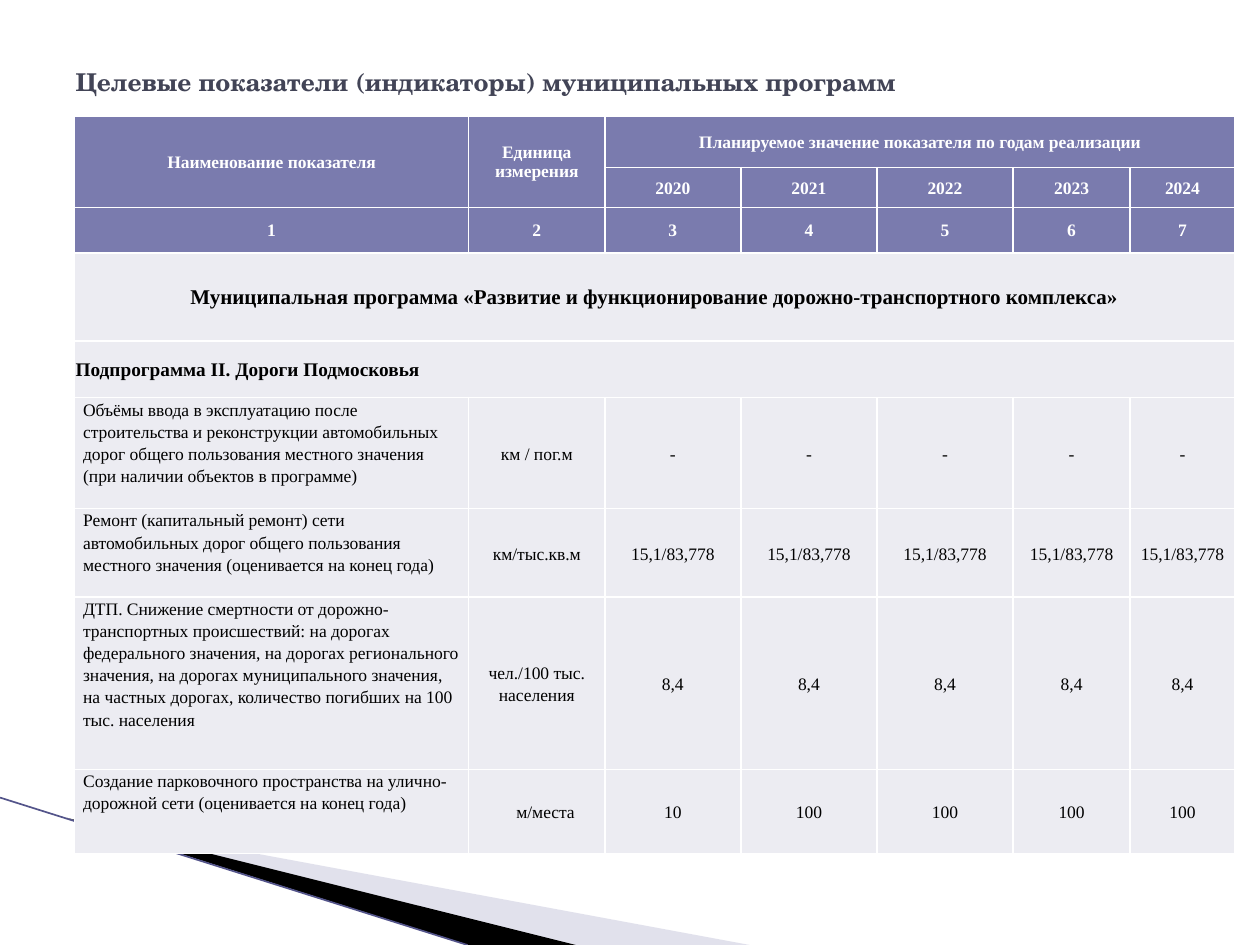
from lxml.etree import SubElement
from pptx import Presentation
from pptx.dml.color import RGBColor
from pptx.enum.shapes import MSO_CONNECTOR
from pptx.enum.text import MSO_ANCHOR, PP_ALIGN
from pptx.oxml import parse_xml
from pptx.oxml.ns import nsdecls, qn
from pptx.util import Inches, Pt

HEADER, BODY, WHITE, BLACK = "7A7BAE", "ECECF2", "FFFFFF", "000000"


def color(value):
    return RGBColor.from_string(value)


def write(frame, text, size=10, font="Times New Roman", ink=BLACK, bold=False,
          align=PP_ALIGN.CENTER, spacing=1.0):
    paragraph = frame.paragraphs[0]
    paragraph.alignment = align
    paragraph.line_spacing = spacing
    run = paragraph.add_run()
    run.text = text
    run.font.size = Pt(size)
    run.font.name = font
    run.font.bold = bold
    run.font.color.rgb = color(ink)


presentation = Presentation()
presentation.slide_width = Inches(10)
presentation.slide_height = Inches(7.5)
slide = presentation.slides.add_slide(presentation.slide_layouts[5])

# Corner wedges: fill, opacity in percent, outline points
wedges = [
    ("B6B6D1", 40, [(0.55, 6.5), (5.95, 7.5), (4.56, 7.5)]),
    (BLACK, 100, [(0.53, 6.49), (4.57, 7.5), (3.72, 7.5)]),
]
for fill, opacity, points in wedges:
    start, *others = [(Inches(x), Inches(y)) for x, y in points]
    builder = slide.shapes.build_freeform(*start)
    builder.add_line_segments(others, close=True)
    wedge = builder.convert_to_shape()
    wedge.shadow.inherit = False
    wedge.line.fill.background()
    wedge.fill.solid()
    wedge.fill.fore_color.rgb = color(fill)
    if opacity < 100:
        tint = wedge.fill._xPr.find(".//" + qn("a:srgbClr"))
        SubElement(tint, qn("a:alpha"), val=str(opacity * 1000))

# Corner line
edge = slide.shapes.add_connector(
    MSO_CONNECTOR.STRAIGHT, Inches(0), Inches(6.33), Inches(3.71), Inches(7.5))
edge.line.color.rgb = color("53548A")
edge.line.width = Pt(0.95)
SubElement(edge._element.spPr, qn("a:effectLst"))

# Title
title = slide.shapes.title
title.left, title.top = Inches(0.5), Inches(0.3)
title.width, title.height = Inches(9), Inches(0.69)
title.text_frame.vertical_anchor = MSO_ANCHOR.MIDDLE
write(title.text_frame, "Целевые показатели (индикаторы) муниципальных программ",
      size=14, font="TeX Gyre Schola", ink="424456", bold=True, align=PP_ALIGN.LEFT)

# Table content
header_rows = [
    ["Наименование показателя", "Единица измерения",
     "Планируемое значение показателя по годам реализации"],
    ["", "", "2020", "2021", "2022", "2023", "2024"],
    ["1", "2", "3", "4", "5", "6", "7"],
]
section_rows = [
    ["Муниципальная программа «Развитие и функционирование дорожно-транспортного комплекса»"],
    ["Подпрограмма II. Дороги Подмосковья"],
]
indicator_rows = [
    ["Объёмы ввода в эксплуатацию после строительства и реконструкции автомобильных дорог "
     "общего пользования местного значения (при наличии объектов в программе)",
     "км / пог.м"] + ["-"] * 5,
    ["Ремонт (капитальный ремонт) сети автомобильных дорог общего пользования местного "
     "значения (оценивается на конец года)", "км/тыс.кв.м"] + ["15,1/83,778"] * 5,
    ["ДТП. Снижение смертности от дорожно-транспортных происшествий: на дорогах "
     "федерального значения, на дорогах регионального значения, на дорогах муниципального "
     "значения, на частных дорогах, количество погибших на 100 тыс. населения",
     "чел./100 тыс. населения"] + ["8,4"] * 5,
    ["Создание парковочного пространства на улично-дорожной сети (оценивается на конец года)",
     "м/места", "10"] + ["100"] * 4,
]
rows = header_rows + section_rows + indicator_rows
column_widths = [3.13, 1.08, 1.08, 1.08, 1.08, 0.93, 0.83]
row_heights = [0.41, 0.31, 0.36, 0.7, 0.45, 0.88, 0.7, 1.37, 0.67]

# Table grid
indicators = slide.shapes.add_table(
    len(rows), len(column_widths), Inches(0.59), Inches(0.92),
    Inches(sum(column_widths)), Inches(sum(row_heights))).table
indicators.first_row = False
indicators.horz_banding = False
for column, width in zip(indicators.columns, column_widths):
    column.width = Inches(width)
for row, height in zip(indicators.rows, row_heights):
    row.height = Inches(height)

# Fills, margins and white borders
for r in range(len(rows)):
    for c in range(len(column_widths)):
        cell = indicators.cell(r, c)
        side = 0.01 if r < 5 else 0.07
        cell.margin_left = cell.margin_right = Inches(side)
        cell.margin_top = Inches(0.01 if r < 5 else 0)
        cell.margin_bottom = 0
        named = r >= 5 and c == 0
        cell.vertical_anchor = MSO_ANCHOR.TOP if named else MSO_ANCHOR.MIDDLE
        for border in ("lnL", "lnR", "lnT", "lnB"):
            cell._tc.tcPr.append(parse_xml(
                f'<a:{border} {nsdecls("a")} w="12700"><a:solidFill>'
                f'<a:srgbClr val="{WHITE}"/></a:solidFill></a:{border}>'))
        cell.fill.solid()
        cell.fill.fore_color.rgb = color(HEADER if r < 3 else BODY)

# The parking unit sits right of centre
indicators.cell(8, 1).margin_left = Inches(0.21)

# Merged cells: top, left, bottom, right
for top, left, bottom, right in [(0, 0, 1, 0), (0, 1, 1, 1), (0, 2, 0, 6),
                                 (3, 0, 3, 6), (4, 0, 4, 6)]:
    indicators.cell(top, left).merge(indicators.cell(bottom, right))

# Table text
for r, texts in enumerate(rows):
    for c, text in enumerate(texts):
        if text:
            write(indicators.cell(r, c).text_frame, text,
                  size={3: 12, 4: 11}.get(r, 10),
                  ink=WHITE if r < 3 else BLACK,
                  bold=r < 5,
                  align=PP_ALIGN.LEFT if r >= 4 and c == 0 else PP_ALIGN.CENTER,
                  spacing=1.0 if r < 5 else 1.15)

presentation.save("out.pptx")
